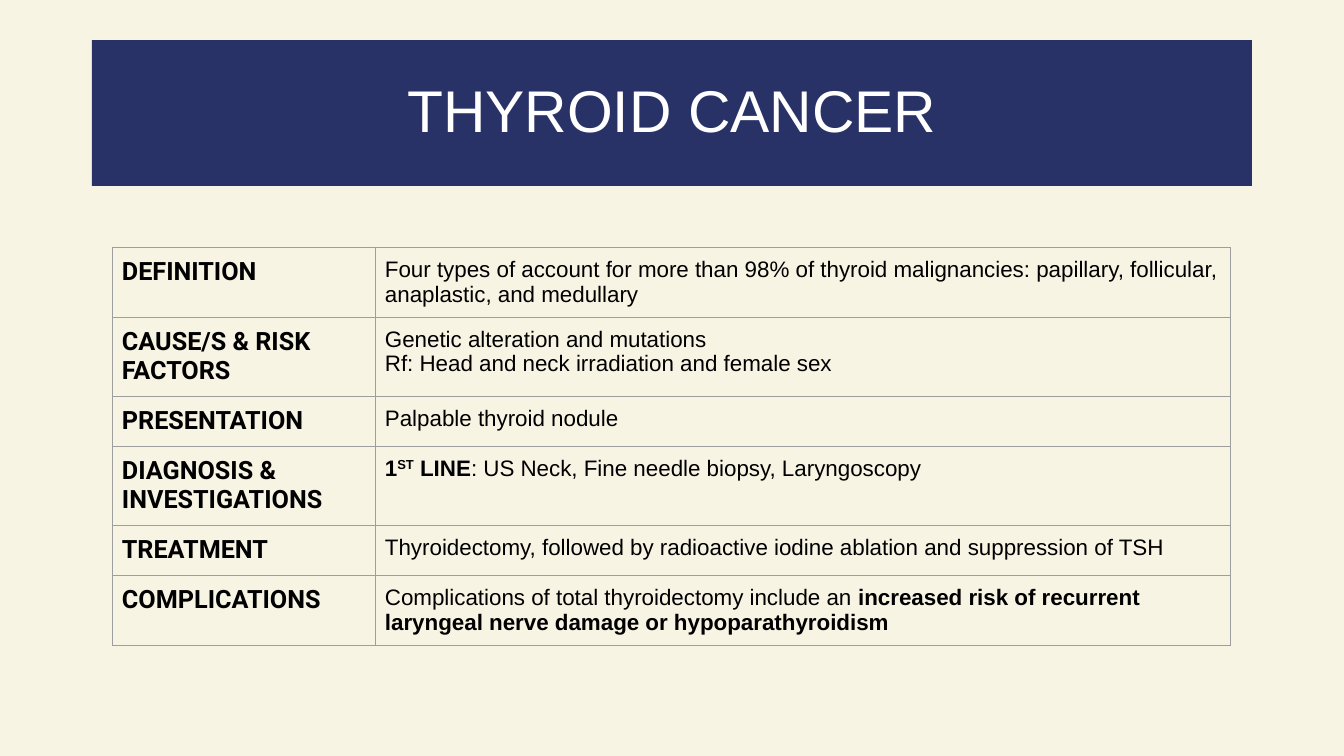
import pptx
import pptx.dml.color
import pptx.enum.shapes
import pptx.enum.text
import pptx.util
from lxml import etree
from pptx.oxml.ns import qn

TITLE = "THYROID CANCER"
ROWS = [
    ("DEFINITION", 70, [[(
        "Four types of account for more than 98% of thyroid malignancies: "
        "papillary, follicular, anaplastic, and medullary", {})]]),
    ("CAUSE/S & RISK FACTORS", 79, [
        [("Genetic alteration and mutations", {})],
        [("Rf: Head and neck irradiation and female sex", {})]]),
    ("PRESENTATION", 50, [[("Palpable thyroid nodule", {})]]),
    ("DIAGNOSIS & INVESTIGATIONS", 79, [[
        ("1", {"bold": True}),
        ("ST", {"bold": True, "baseline": 30}),
        (" LINE", {"bold": True}),
        (": US Neck, Fine needle biopsy, Laryngoscopy", {})]]),
    ("TREATMENT", 50, [[(
        "Thyroidectomy, followed by radioactive iodine ablation "
        "and suppression of TSH", {})]]),
    ("COMPLICATIONS", 70, [[
        ("Complications of total thyroidectomy include an ", {}),
        ("increased risk of recurrent laryngeal nerve damage "
         "or hypoparathyroidism", {"bold": True})]]),
]

COLORS = {
    "background": "F8F4E4",
    "banner": "293267",
    "title": "FFFFFF",
    "text": "000000",
    "border": "9E9E9E",
}
SLIDE_SIZE = (1344, 756)
BANNER_BOX = (92, 40, 1160, 146)
TABLE_LEFT, TABLE_TOP = 112, 247
COLUMN_WIDTHS = (263, 856)
CELL_MARGIN = 10
BORDER_POINTS = 0.75


def px(value):
    return pptx.util.Emu(round(value * 914400 / 100.8))


def color(name):
    return pptx.dml.color.RGBColor.from_string(COLORS[name])


def write_text(paragraph, text, size=16, font="Arial", fill="text",
               bold=False, baseline=0):
    run = paragraph.add_run()
    run.text = text
    run.font.size = pptx.util.Pt(size)
    run.font.name = font
    run.font.bold = bold
    run.font.color.rgb = color(fill)
    if baseline:
        run._r.get_or_add_rPr().set("baseline", str(baseline * 1000))


def style_cell(cell):
    cell.margin_left = cell.margin_right = px(CELL_MARGIN)
    cell.margin_top = cell.margin_bottom = px(CELL_MARGIN)
    properties = cell._tc.get_or_add_tcPr()
    for side in ("lnL", "lnR", "lnT", "lnB"):
        line = etree.SubElement(properties, qn(f"a:{side}"),
                                w=str(pptx.util.Pt(BORDER_POINTS)))
        solid = etree.SubElement(line, qn("a:solidFill"))
        etree.SubElement(solid, qn("a:srgbClr"), val=COLORS["border"])
    cell.fill.background()


def add_banner(slide):
    banner = slide.shapes.add_shape(
        pptx.enum.shapes.MSO_SHAPE.RECTANGLE, *map(px, BANNER_BOX))
    banner.shadow.inherit = False
    banner.fill.solid()
    banner.fill.fore_color.rgb = color("banner")
    banner.line.fill.background()
    banner.text_frame.word_wrap = True
    banner.text_frame.vertical_anchor = pptx.enum.text.MSO_ANCHOR.MIDDLE
    paragraph = banner.text_frame.paragraphs[0]
    paragraph.alignment = pptx.enum.text.PP_ALIGN.CENTER
    paragraph.line_spacing = 0.9
    write_text(paragraph, TITLE, size=42, fill="title")


def add_summary_table(slide):
    table_height = sum(height for _, height, _ in ROWS)
    table = slide.shapes.add_table(
        len(ROWS), len(COLUMN_WIDTHS), px(TABLE_LEFT), px(TABLE_TOP),
        px(sum(COLUMN_WIDTHS)), px(table_height)).table
    table.first_row = False
    table.horz_banding = False
    for column, width in zip(table.columns, COLUMN_WIDTHS):
        column.width = px(width)
    for row, (heading, height, paragraphs) in zip(table.rows, ROWS):
        row.height = px(height)
        heading_cell, detail_cell = row.cells
        style_cell(heading_cell)
        style_cell(detail_cell)
        write_text(heading_cell.text_frame.paragraphs[0], heading,
                   size=18, font="Roboto", bold=True)
        frame = detail_cell.text_frame
        for index, runs in enumerate(paragraphs):
            paragraph = frame.add_paragraph() if index else frame.paragraphs[0]
            for text, text_format in runs:
                write_text(paragraph, text, **text_format)


def main():
    presentation = pptx.Presentation()
    presentation.slide_width, presentation.slide_height = map(px, SLIDE_SIZE)
    slide = presentation.slides.add_slide(presentation.slide_layouts[6])
    slide.background.fill.solid()
    slide.background.fill.fore_color.rgb = color("background")
    add_banner(slide)
    add_summary_table(slide)
    presentation.save("out.pptx")


if __name__ == "__main__":
    main()
